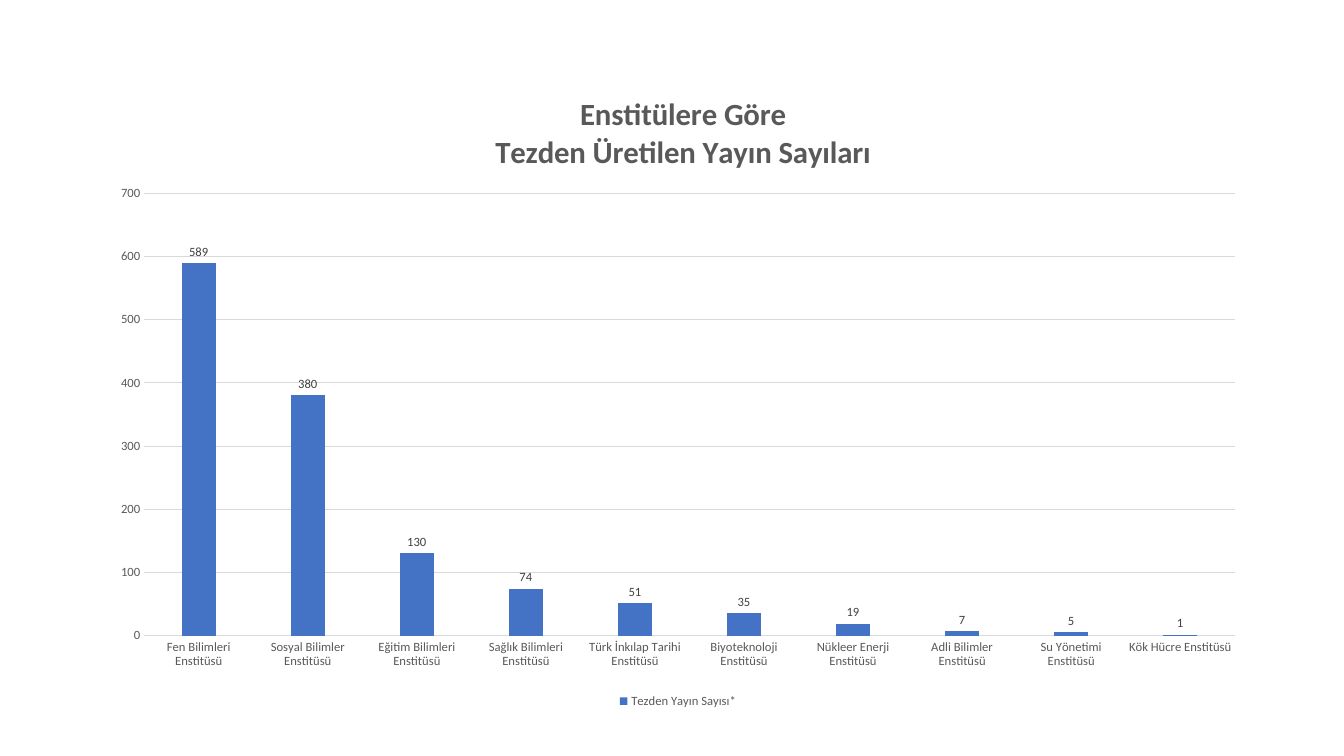
from dataclasses import dataclass
from typing import Any

from lxml.etree import SubElement
from pptx import Presentation
from pptx.chart.data import CategoryChartData
from pptx.dml.color import RGBColor
from pptx.enum.chart import XL_CHART_TYPE, XL_LABEL_POSITION, XL_LEGEND_POSITION, XL_TICK_MARK
from pptx.oxml.ns import qn
from pptx.util import Pt

COLORS = {"bar": "4472C4", "text": "595959", "value": "404040", "rule": "D9D9D9"}
HEADING = ("Enstitülere Göre", "Tezden Üretilen Yayın Sayıları")


@dataclass(frozen=True)
class Institute:
    name: str
    publications: int


INSTITUTES = [
    Institute("Fen Bilimleri Enstitüsü", 589),
    Institute("Sosyal Bilimler Enstitüsü", 380),
    Institute("Eğitim Bilimleri Enstitüsü", 130),
    Institute("Sağlık Bilimleri Enstitüsü", 74),
    Institute("Türk İnkılap Tarihi Enstitüsü", 51),
    Institute("Biyoteknoloji Enstitüsü", 35),
    Institute("Nükleer Enerji Enstitüsü", 19),
    Institute("Adli Bilimler Enstitüsü", 7),
    Institute("Su Yönetimi Enstitüsü", 5),
    Institute("Kök Hücre Enstitüsü", 1),
]


def apply(target: Any, values: dict[str, Any]) -> None:
    for attribute, value in values.items():
        setattr(target, attribute, value)


def style_font(font: Any, size: float, color: str, bold: bool = False) -> None:
    apply(font, {"name": "Calibri", "size": Pt(size), "bold": bold})
    font.color.rgb = RGBColor.from_string(COLORS[color])


def style_rule(line: Any) -> None:
    line.width = Pt(0.75)
    line.color.rgb = RGBColor.from_string(COLORS["rule"])


def place(part: Any, index: int, settings: dict[str, Any]) -> None:
    for previous in part.findall(qn("c:layout")):
        part.remove(previous)
    layout = SubElement(part, qn("c:layout"))
    manual = SubElement(layout, qn("c:manualLayout"))
    for tag, value in settings.items():
        SubElement(manual, qn(f"c:{tag}")).set("val", str(value))
    part.insert(index, layout)


def add_heading(chart: Any) -> None:
    chart.has_title = True
    title = chart.chart_title
    title.include_in_layout = False
    frame = title.text_frame
    for position, wording in enumerate(HEADING):
        paragraph = frame.add_paragraph() if position else frame.paragraphs[0]
        run = paragraph.add_run()
        run.text = wording
        style_font(run.font, 22, "text", bold=True)
    place(title._element, 1, {"xMode": "edge", "yMode": "edge", "x": 0.34, "y": 0.03})


def style_axes(chart: Any) -> None:
    for axis in (chart.category_axis, chart.value_axis):
        apply(axis, {"major_tick_mark": XL_TICK_MARK.NONE, "minor_tick_mark": XL_TICK_MARK.NONE})
        style_font(axis.tick_labels.font, 9, "text")
    style_rule(chart.category_axis.format.line)
    counts = chart.value_axis
    apply(counts, {"minimum_scale": 0, "maximum_scale": 700, "major_unit": 100,
                   "has_major_gridlines": True})
    counts.format.line.fill.background()
    style_rule(counts.major_gridlines.format.line)


def style_bars(chart: Any) -> None:
    bars = chart.plots[0]
    apply(bars, {"gap_width": 219, "overlap": -27, "vary_by_categories": False,
                 "has_data_labels": True})
    fill = bars.series[0].format.fill
    fill.solid()
    fill.fore_color.rgb = RGBColor.from_string(COLORS["bar"])
    apply(bars.data_labels, {"show_value": True, "position": XL_LABEL_POSITION.OUTSIDE_END})
    style_font(bars.data_labels.font, 9, "value")


def add_legend(chart: Any) -> None:
    chart.has_legend = True
    apply(chart.legend, {"position": XL_LEGEND_POSITION.BOTTOM, "include_in_layout": False})
    style_font(chart.legend.font, 9, "text")


def main() -> None:
    deck = Presentation()
    apply(deck, {"slide_width": Pt(960), "slide_height": Pt(540)})
    slide = deck.slides.add_slide(deck.slide_layouts[6])
    data = CategoryChartData()
    data.categories = [institute.name for institute in INSTITUTES]
    data.add_series("Tezden Yayın Sayısı*", [institute.publications for institute in INSTITUTES])
    chart = slide.shapes.add_chart(
        XL_CHART_TYPE.COLUMN_CLUSTERED, Pt(69.84), Pt(51.12), Pt(828.72), Pt(457.92), data
    ).chart
    apply(chart.font, {"name": "Calibri", "size": Pt(10)})
    add_heading(chart)
    style_axes(chart)
    style_bars(chart)
    add_legend(chart)
    plot_area = chart._chartSpace.chart.plotArea
    place(plot_area, 0, {"layoutTarget": "inner", "xMode": "edge", "yMode": "edge",
                         "x": 0.04, "y": 0.19, "w": 0.94, "h": 0.69})
    deck.save("out.pptx")


if __name__ == "__main__":
    main()
